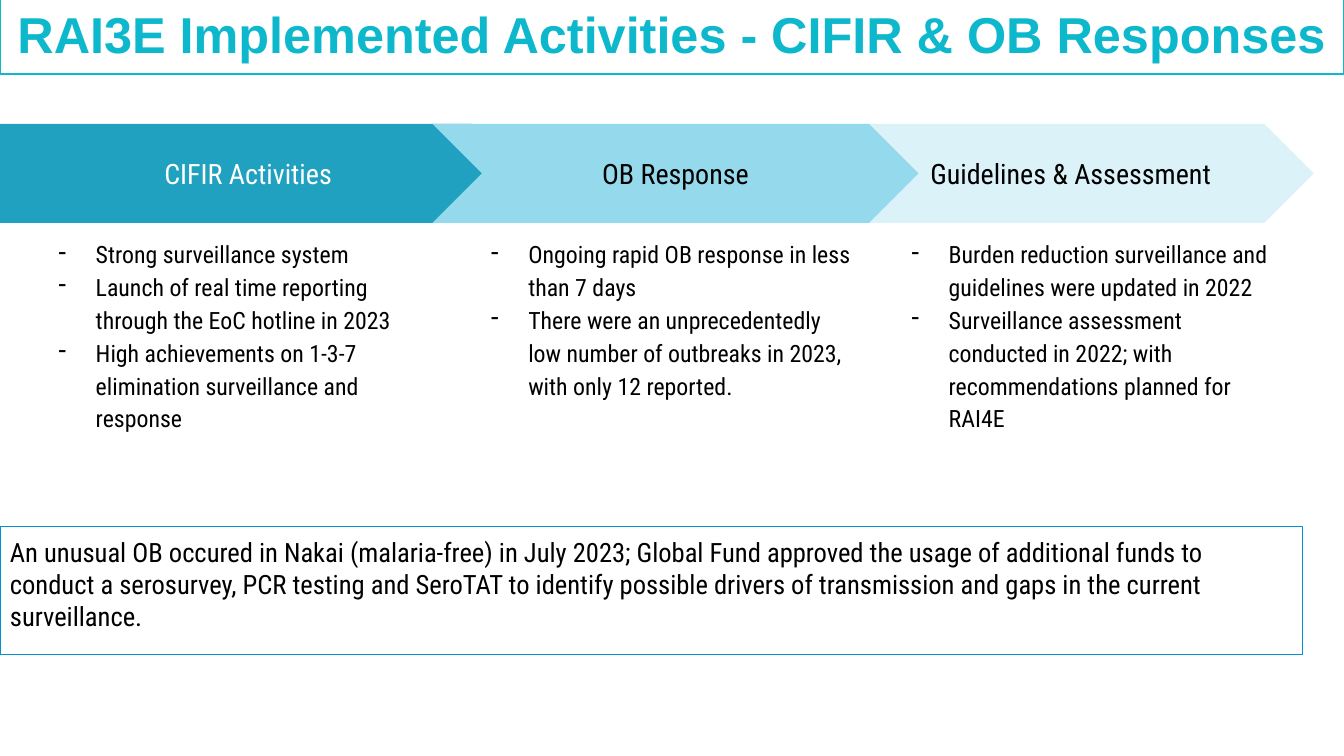
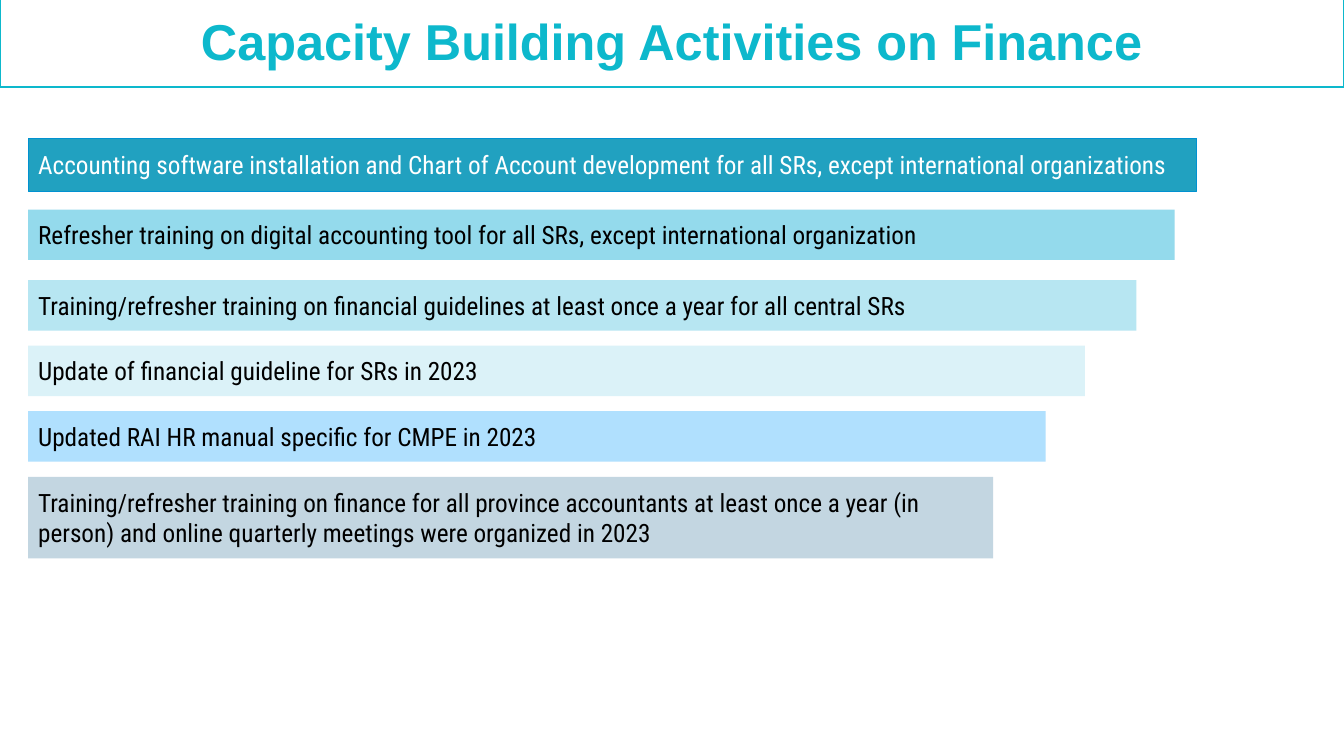
from lxml import etree
from pptx import Presentation
from pptx.dml.color import RGBColor
from pptx.enum.shapes import MSO_SHAPE as Shape
from pptx.enum.text import MSO_ANCHOR as Anchor, PP_ALIGN as Align
from pptx.oxml.ns import qn
from pptx.util import Inches, Pt

SLIDE_W, SLIDE_H = 13.33, 7.5
BODY_FONT, TITLE_FONT = "Roboto Condensed", "Arial"
COLORS = {
    "title": "0DB8CC", "border": "0092D1", "black": "000000", "white": "FFFFFF",
    "teal": "21A1C0", "sky": "94DAEC", "aqua": "B7E6F2", "pale": "DBF2F8",
    "blue": "B0E0FE", "gray": "C3D6E1",
}

# Content
RESPONSE_TITLE = "RAI3E Implemented Activities - CIFIR & OB Responses"
# Later stages overlap earlier ones: (heading, arrow, left, width, fill, text color,
# left of points, width of points, points)
STAGES = [
    ("Guidelines & Assessment", Shape.CHEVRON, 8.21, 4.82, "pale", "black", 8.78, 3.94, [
        "Burden reduction surveillance and guidelines were updated in 2022",
        "Surveillance assessment conducted in 2022; with recommendations planned for RAI4E",
    ]),
    ("CIFIR Activities", Shape.PENTAGON, 0, 5.17, "teal", "white", 0.32, 3.9, [
        "Strong surveillance system",
        "Launch of real time reporting through the EoC hotline in 2023",
        "High achievements on 1-3-7 elimination surveillance and response",
    ]),
    ("OB Response", Shape.CHEVRON, 4.29, 4.82, "sky", "black", 4.61, 3.96, [
        "Ongoing rapid OB response in less than 7 days",
        "There were an unprecedentedly low number of outbreaks in 2023, "
        "with only 12 reported.",
    ]),
]
OUTBREAK_NOTE = (
    "An unusual OB occured in Nakai (malaria-free) in July 2023; Global Fund approved "
    "the usage of additional funds to conduct a serosurvey, PCR testing and SeroTAT to "
    "identify possible drivers of transmission and gaps in the current surveillance."
)

FINANCE_TITLE = "Capacity Building Activities on Finance"
# (text, width, height, gap below, fill, text color, border)
FINANCE_BARS = [
    ("Accounting software installation and Chart of Account development for all SRs, "
     "except international organizations", 11.59, 0.53, 0.18, "teal", "white", "border"),
    ("Refresher training on digital accounting tool for all SRs, except international "
     "organization", 11.37, 0.5, 0.2, "sky", "black", None),
    ("Training/refresher training on financial guidelines at least once a year for all "
     "central SRs", 10.99, 0.5, 0.15, "aqua", "black", None),
    ("Update of financial guideline for SRs in 2023",
     10.48, 0.5, 0.15, "pale", "black", None),
    ("Updated RAI HR manual specific for CMPE in 2023",
     10.09, 0.5, 0.15, "blue", "black", None),
    ("Training/refresher training on finance for all province accountants at least once "
     "a year (in person) and online quarterly meetings were organized in 2023",
     9.57, 0.81, 0, "gray", "black", None),
]


def rgb(name):
    return RGBColor.from_string(COLORS[name])


def add_dash(paragraph):
    """Give a paragraph a hanging dash bullet."""
    props = paragraph._p.get_or_add_pPr()
    props.set("marL", str(Inches(0.5)))
    props.set("indent", str(-Inches(0.37)))
    color = etree.SubElement(props, qn("a:buClr"))
    etree.SubElement(color, qn("a:srgbClr"), val=COLORS["black"])
    etree.SubElement(props, qn("a:buChar"), char="-")


def write(shape, lines, size=18, color="black", font=BODY_FONT, bold=False,
          align=Align.LEFT, anchor=Anchor.TOP, inset=0.1, dashed=False, spacing=None):
    frame = shape.text_frame
    frame.word_wrap = True
    frame.vertical_anchor = anchor
    frame.margin_left = frame.margin_right = Inches(inset)
    frame.margin_top = frame.margin_bottom = Inches(inset)
    for i, line in enumerate(lines):
        paragraph = frame.add_paragraph() if i else frame.paragraphs[0]
        paragraph.alignment = align
        if spacing:
            paragraph.line_spacing = spacing
        if dashed:
            add_dash(paragraph)
        run = paragraph.add_run()
        run.text = line
        run.font.name, run.font.size, run.font.bold = font, Pt(size), bold
        run.font.color.rgb = rgb(color)


def add_panel(slide, box, kind=Shape.RECTANGLE, fill=None, line=None, weight=0.75):
    panel = slide.shapes.add_shape(kind, *map(Inches, box))
    panel.shadow.inherit = False
    if fill:
        panel.fill.solid()
        panel.fill.fore_color.rgb = rgb(fill)
    else:
        panel.fill.background()
    if line:
        panel.line.color.rgb = rgb(line)
        panel.line.width = Pt(weight)
    else:
        panel.line.fill.background()
    return panel


def add_titled_slide(deck, title, top, height):
    slide = deck.slides.add_slide(deck.slide_layouts[6])
    banner = add_panel(slide, (0, top, SLIDE_W, height), line="title", weight=1.5)
    write(banner, [title], size=36, color="title", font=TITLE_FONT, bold=True,
          align=Align.CENTER, anchor=Anchor.MIDDLE, inset=0)
    return slide


def build_responses(deck):
    slide = add_titled_slide(deck, RESPONSE_TITLE, -0.06, 0.79)
    arrow_top, arrow_h, points_h = 1.23, 0.98, 2.7
    # Stage arrows with their points below
    for heading, kind, left, width, fill, color, points_left, points_w, points in STAGES:
        arrow = add_panel(slide, (left, arrow_top, width, arrow_h), kind, fill)
        write(arrow, [heading], size=20, color=color, align=Align.CENTER,
              anchor=Anchor.MIDDLE, inset=0.13)
        box = (points_left, arrow_top + arrow_h, points_w, points_h)
        write(slide.shapes.add_textbox(*map(Inches, box)), points, size=17,
              inset=0.13, dashed=True, spacing=1.15)
    # Outbreak note
    note = add_panel(slide, (0, 5.22, 12.92, 1.27), line="border")
    write(note, [OUTBREAK_NOTE], size=19)


def build_finance(deck):
    slide = add_titled_slide(deck, FINANCE_TITLE, -0.05, 0.91)
    # Bars stacked from the top, each narrower than the last
    top = 1.37
    for text, width, height, gap, fill, color, line in FINANCE_BARS:
        bar = add_panel(slide, (0.28, top, width, height), fill=fill, line=line)
        write(bar, [text], color=color, anchor=Anchor.MIDDLE)
        top += height + gap


def main():
    deck = Presentation()
    deck.slide_width, deck.slide_height = Inches(SLIDE_W), Inches(SLIDE_H)
    build_responses(deck)
    build_finance(deck)
    deck.save("out.pptx")


if __name__ == "__main__":
    main()
